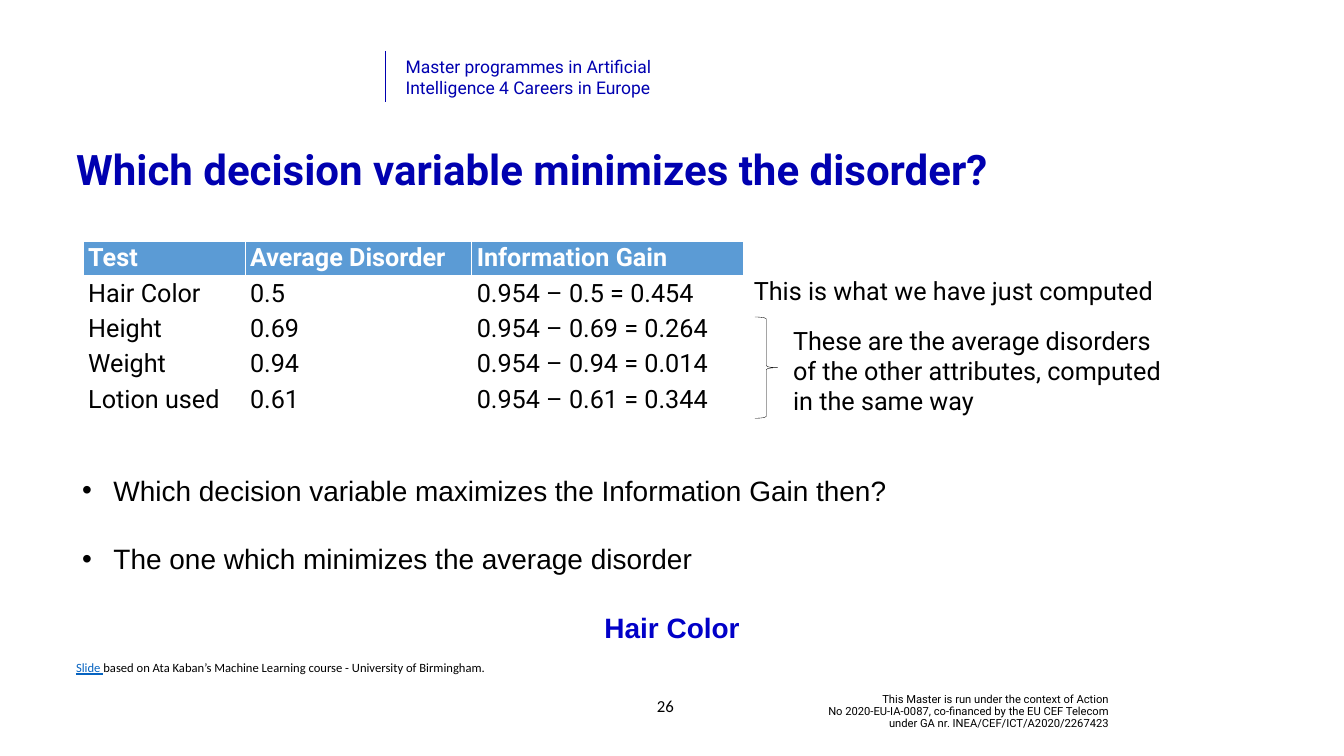
from lxml.etree import SubElement
from pptx import Presentation
from pptx.dml.color import RGBColor
from pptx.enum.shapes import MSO_CONNECTOR, MSO_SHAPE
from pptx.enum.text import MSO_ANCHOR, MSO_AUTO_SIZE, PP_ALIGN
from pptx.oxml.ns import qn
from pptx.util import Inches, Pt

WIDTH, HEIGHT = Inches(26.67), Inches(15)
NAVY = RGBColor(0x00, 0x00, 0xB0)
ANSWER_BLUE = RGBColor(0x01, 0x00, 0xC8)
LINK_BLUE = RGBColor(0x05, 0x63, 0xC1)
HEADER_BLUE = RGBColor(0x5B, 0x9B, 0xD5)
BLACK = RGBColor(0x00, 0x00, 0x00)
WHITE = RGBColor(0xFF, 0xFF, 0xFF)

COLUMN_SHARES = [12.04, 16.87, 20.17]
DISORDER_ROWS = [
    ["Test", "Average Disorder", "Information Gain"],
    ["Hair Color", "0.5", "0.954 – 0.5 = 0.454"],
    ["Height", "0.69", "0.954 – 0.69 = 0.264"],
    ["Weight", "0.94", "0.954 – 0.94 = 0.014"],
    ["Lotion used", "0.61", "0.954 – 0.61 = 0.344"],
]


def across(percent):
    return int(WIDTH * percent / 100)


def down(percent):
    return int(HEIGHT * percent / 100)


def area(left, top, width, height):
    """Turn percentages of the slide into a position and size."""
    return across(left), down(top), across(width), down(height)


def add_run(paragraph, text, size, font="Roboto", color=BLACK, bold=False, underline=False):
    run = paragraph.add_run()
    run.text = text
    run.font.size = Pt(size)
    run.font.name = font
    run.font.color.rgb = color
    run.font.bold = bold
    run.font.underline = underline


def add_lines(paragraph, lines, size, **style):
    for index, line in enumerate(lines):
        if index:
            paragraph.add_line_break()
        add_run(paragraph, line, size, **style)


def add_text_area(slide, box, anchor=MSO_ANCHOR.TOP, align=PP_ALIGN.LEFT):
    """Add a wrapping text box and return its first paragraph."""
    frame = slide.shapes.add_textbox(*area(*box)).text_frame
    frame.word_wrap = True
    frame.vertical_anchor = anchor
    paragraph = frame.paragraphs[0]
    paragraph.alignment = align
    return paragraph


def move_placeholder(placeholder, box):
    placeholder.left, placeholder.top, placeholder.width, placeholder.height = area(*box)
    frame = placeholder.text_frame
    frame.auto_size = MSO_AUTO_SIZE.NONE
    frame.vertical_anchor = MSO_ANCHOR.TOP
    return frame


def set_bullet(paragraph, char=None):
    """Give a hanging bullet, or clear bullet and indent if there is no char."""
    properties = paragraph._p.get_or_add_pPr()
    indent = Inches(0.62) if char else 0
    properties.set("marL", str(indent))
    properties.set("indent", str(-indent))
    if char:
        SubElement(properties, qn("a:buFont"), typeface="Arial")
        SubElement(properties, qn("a:buChar"), char=char)
    else:
        SubElement(properties, qn("a:buNone"))


def set_borders(cell, bottom_width):
    properties = cell._tc.get_or_add_tcPr()
    for side, width in (("L", 1), ("R", 1), ("T", 1), ("B", bottom_width)):
        border = SubElement(properties, qn(f"a:ln{side}"), w=str(Pt(width)))
        fill = SubElement(border, qn("a:solidFill"))
        SubElement(fill, qn("a:srgbClr"), val=str(WHITE))


def add_page_frame(slide):
    # Programme name beside its rule
    rule = slide.shapes.add_connector(
        MSO_CONNECTOR.STRAIGHT, across(28.68), down(6.73), across(28.68), down(13.53))
    rule.line.color.rgb = NAVY
    rule.line.width = Pt(0.5)
    SubElement(rule._element.spPr, qn("a:effectLst"))
    programme = add_text_area(slide, (29.81, 7.07, 23.88, 6.27))
    add_lines(programme, ["Master programmes in Artificial",
                          "Intelligence 4 Careers in Europe"], 25, color=NAVY)

    # Funding note and page number
    funding = add_text_area(slide, (56.32, 91.6, 26.55, 5.07), MSO_ANCHOR.MIDDLE, PP_ALIGN.RIGHT)
    funding.line_spacing = 0.9
    add_lines(funding, ["This Master is run under the context of Action",
                        "No 2020-EU-IA-0087, co-financed by the EU CEF Telecom",
                        "under GA nr. INEA/CEF/ICT/A2020/2267423"], 16)
    page_number = add_text_area(slide, (47.43, 90.73, 4.16, 5.33),
                                MSO_ANCHOR.MIDDLE, PP_ALIGN.CENTER)
    add_run(page_number, "26", 24, font="Calibri")


def add_title(slide):
    frame = move_placeholder(slide.shapes.title, (5.29, 18.87, 88.53, 15.27))
    title = frame.paragraphs[0]
    title.alignment = PP_ALIGN.LEFT
    title.line_spacing = Pt(70)
    add_run(title, "Which decision variable minimizes the disorder?", 60, color=NAVY, bold=True)


def add_disorder_table(slide):
    table = slide.shapes.add_table(len(DISORDER_ROWS), len(COLUMN_SHARES),
                                   *area(6.19, 31.87, sum(COLUMN_SHARES), 23.33)).table
    table.horz_banding = False
    for column, share in zip(table.columns, COLUMN_SHARES):
        column.width = across(share)
    for r, values in enumerate(DISORDER_ROWS):
        is_header = r == 0
        for c, value in enumerate(values):
            cell = table.cell(r, c)
            set_borders(cell, 3 if is_header else 1)
            if is_header:
                cell.fill.solid()
                cell.fill.fore_color.rgb = HEADER_BLUE
            else:
                cell.fill.background()
            add_run(cell.text_frame.paragraphs[0], value, 36,
                    color=WHITE if is_header else BLACK, bold=is_header)


def add_table_notes(slide):
    computed = add_text_area(slide, (55.72, 36.07, 37.12, 4.73))
    add_run(computed, "This is what we have just computed", 36)
    others = add_text_area(slide, (58.64, 42.67, 29.21, 12.8))
    add_run(others, "These are the average disorders of the other attributes, "
                    "computed in the same way", 36)
    brace = slide.shapes.add_shape(MSO_SHAPE.RIGHT_BRACE, *area(56.17, 41.93, 1.69, 13.4))
    brace.shadow.inherit = False
    brace.fill.background()
    brace.line.color.rgb = BLACK
    brace.line.width = Pt(0.5)


def add_conclusion(slide):
    frame = move_placeholder(slide.placeholders[1], (5.74, 62.27, 88.53, 23.13))
    points = [
        ("Which decision variable maximizes the Information Gain then?", True),
        ("The one which minimizes the average disorder", True),
        ("Hair Color", False),
    ]
    for index, (text, bulleted) in enumerate(points):
        point = frame.add_paragraph() if index else frame.paragraphs[0]
        point.space_before = Pt(50 if index else 0)
        set_bullet(point, "•" if bulleted else None)
        point.alignment = PP_ALIGN.LEFT if bulleted else PP_ALIGN.CENTER
        add_run(point, text, 40, font="Arial",
                color=BLACK if bulleted else ANSWER_BLUE, bold=not bulleted)


def add_source_note(slide):
    note = add_text_area(slide, (5.29, 87, 48.74, 2.67))
    add_run(note, "Slide ", 18, font="Calibri", color=LINK_BLUE, underline=True)
    add_run(note, "based on Ata Kaban’s Machine Learning course - University of Birmingham.",
            18, font="Calibri")


def main():
    presentation = Presentation()
    presentation.slide_width, presentation.slide_height = WIDTH, HEIGHT
    slide = presentation.slides.add_slide(presentation.slide_layouts[1])
    add_page_frame(slide)
    add_title(slide)
    add_source_note(slide)
    add_conclusion(slide)
    add_disorder_table(slide)
    add_table_notes(slide)
    presentation.save("out.pptx")


if __name__ == "__main__":
    main()
